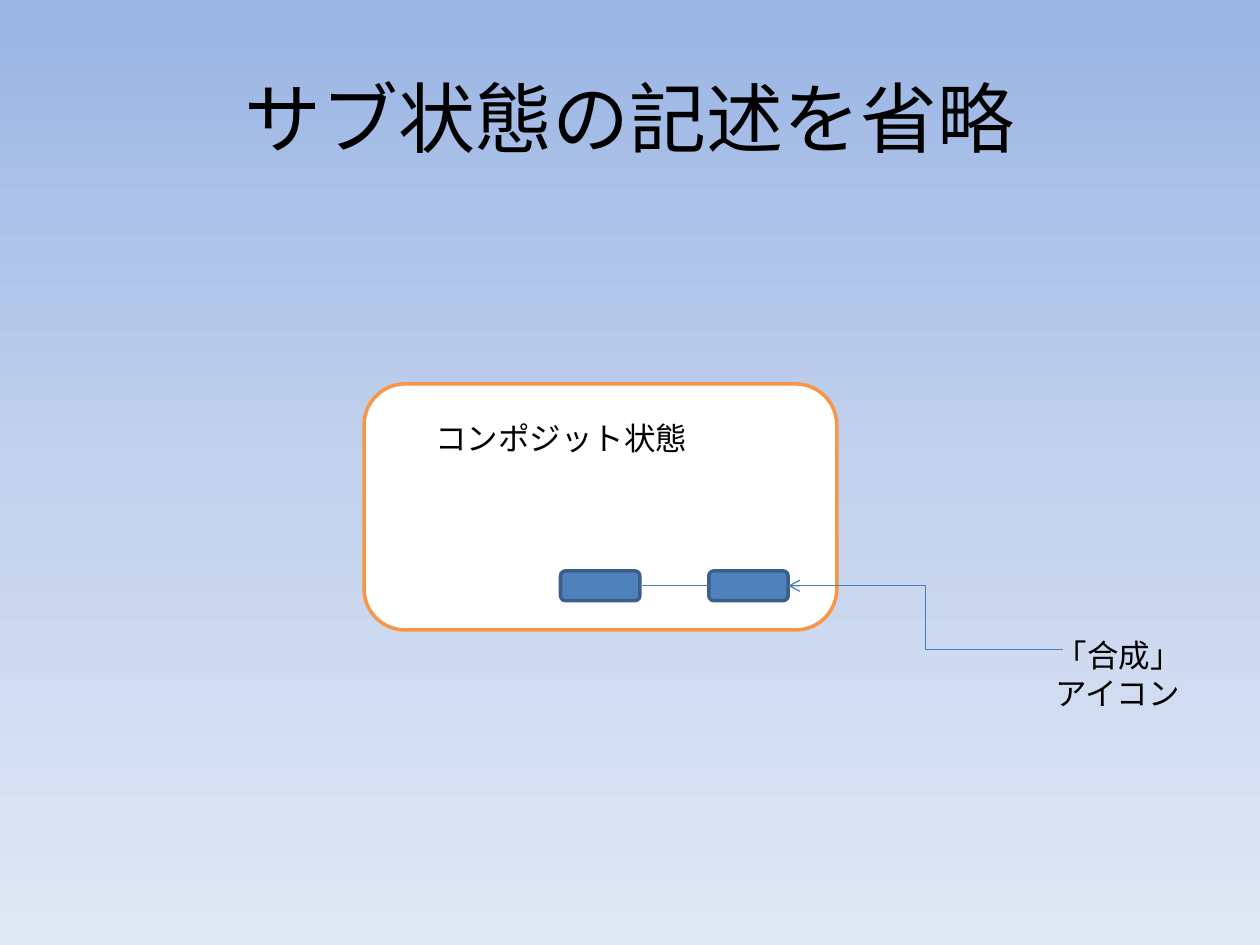
from copy import deepcopy

from lxml.etree import SubElement
from pptx import Presentation
from pptx.dml.color import RGBColor
from pptx.enum.shapes import MSO_CONNECTOR, MSO_SHAPE
from pptx.enum.text import MSO_ANCHOR, PP_ALIGN
from pptx.oxml.ns import qn
from pptx.util import Cm, Pt

BLACK = RGBColor(0x00, 0x00, 0x00)
WHITE = RGBColor(0xFF, 0xFF, 0xFF)
ORANGE = RGBColor(0xF7, 0x96, 0x46)
BLUE = RGBColor(0x4F, 0x81, 0xBD)
DARK_BLUE = RGBColor(0x3A, 0x5F, 0x8C)
LINE_BLUE = RGBColor(0x4B, 0x7E, 0xBC)
SKY = (
    (0, RGBColor(0x9A, 0xB5, 0xE4)),
    (0.5, RGBColor(0xC2, 0xD1, 0xED)),
    (1, RGBColor(0xE1, 0xE8, 0xF5)),
)


def set_background(s):
    fill = s.background.fill
    fill.gradient()
    fill.gradient_angle = 270
    stops = s.element.find(".//" + qn("a:gsLst"))
    stops.append(deepcopy(stops[-1]))
    for stop, (position, color) in zip(fill.gradient_stops, SKY):
        stop.position = position
        stop.color.rgb = color


def add_text(s, text, left, top, width, height, size=18,
             align=PP_ALIGN.LEFT, anchor=MSO_ANCHOR.TOP):
    sp = s.shapes.add_textbox(Cm(left), Cm(top), Cm(width), Cm(height))
    tf = sp.text_frame
    tf.word_wrap = True
    tf.vertical_anchor = anchor
    tf.text = text
    p = tf.paragraphs[0]
    p.alignment = align
    font = p.runs[0].font
    font.name = "Calibri"
    font.size = Pt(size)
    font.color.rgb = BLACK


def add_state(s, left, top, width, height, fill, line):
    sp = s.shapes.add_shape(MSO_SHAPE.ROUNDED_RECTANGLE,
                            Cm(left), Cm(top), Cm(width), Cm(height))
    sp.shadow.inherit = False
    sp.fill.solid()
    sp.fill.fore_color.rgb = fill
    sp.line.color.rgb = line
    sp.line.width = Pt(2)
    return sp


def add_link(s, kind, start, end):
    cxn = s.shapes.add_connector(kind, *map(Cm, start + end))
    cxn.line.color.rgb = LINE_BLUE
    cxn.line.width = Pt(0.75)
    SubElement(cxn.element.spPr, qn("a:effectLst"))
    return cxn


def add_arrowhead(cxn):
    SubElement(cxn.line._get_or_add_ln(), qn("a:tailEnd"), type="arrow")


def main():
    """Build the slide on a composite state with hidden substates."""
    prs = Presentation()
    prs.slide_width, prs.slide_height = Cm(25.4), Cm(19.05)
    s = prs.slides.add_slide(prs.slide_layouts[6])
    set_background(s)

    add_text(s, "サブ状態の記述を省略", 1.27, 0.76, 22.86, 3.18, 44,
             PP_ALIGN.CENTER, MSO_ANCHOR.MIDDLE)
    add_state(s, 7.34, 7.74, 9.53, 4.96, WHITE, ORANGE)
    add_text(s, "コンポジット状態", 8.53, 8.33, 6.76, 1.02)

    left_icon, right_icon = (
        add_state(s, left, 11.51, 1.6, 0.6, BLUE, DARK_BLUE)
        for left in (11.3, 14.29))
    link = add_link(s, MSO_CONNECTOR.STRAIGHT, (12.9, 11.81), (14.29, 11.81))
    link.begin_connect(left_icon, 3)
    link.end_connect(right_icon, 1)

    pointer = add_link(s, MSO_CONNECTOR.ELBOW, (21.43, 13.1), (15.89, 11.81))
    pointer.end_connect(right_icon, 3)
    add_arrowhead(pointer)
    add_text(s, "「合成」アイコン", 21.03, 12.7, 3.58, 1.8)

    prs.save("out.pptx")


if __name__ == "__main__":
    main()
